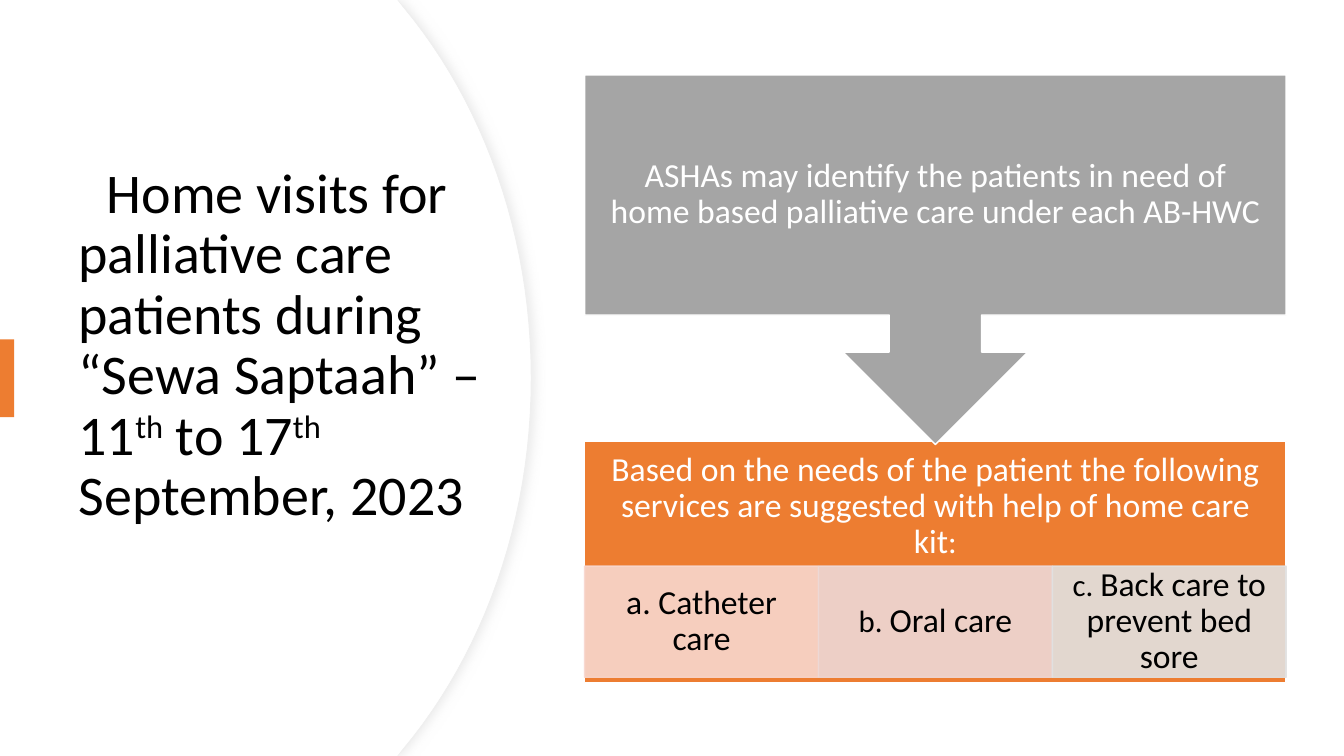
"""Build a slide on home visits for palliative care patients."""
from dataclasses import dataclass

from lxml import etree
from pptx import Presentation
from pptx import util as u
from pptx.dml.color import RGBColor
from pptx.enum import shapes, text
from pptx.oxml import parse_xml
from pptx.oxml.ns import nsdecls, qn

WIDTH, HEIGHT = u.Inches(13.33), u.Inches(7.5)
COLOURS = {
    "white": "FFFFFF", "black": "000000", "orange": "ED7D31", "grey": "A5A5A5",
    "edge": "EFEFEF", "shade": "D9D9D9",
    "peach": "F8D7CE", "rose": "EDD9D7", "silver": "E1E1E1",
}
CURVE_STEPS = 24


@dataclass(frozen=True)
class Area:
    """A rectangle in percent of the slide's size."""
    left: float
    top: float
    width: float
    height: float

    def emu(self) -> tuple:
        return (share(self.left, WIDTH), share(self.top, HEIGHT),
                share(self.width, WIDTH), share(self.height, HEIGHT))


@dataclass(frozen=True)
class Run:
    """A piece of text with its size and baseline."""
    words: str
    size: float = 24
    raised: bool = False


@dataclass(frozen=True)
class Service:
    """One service of the home care kit."""
    runs: tuple
    colour: str
    side: float


def share(percent: float, whole: int) -> u.Emu:
    """Turn a percentage of a length into EMU."""
    return u.Emu(round(percent * whole / 100))


def rgb(name: str) -> RGBColor:
    """Look up a named colour."""
    return RGBColor.from_string(COLOURS[name])


def write(shape, runs, *, colour="white", align=text.PP_ALIGN.CENTER,
          insets=(0.19, 0.19, 0.19, 0.19), indent=0.0) -> None:
    """Fill a shape with one formatted paragraph; insets run left, top, right, bottom."""
    frame = shape.text_frame
    frame.word_wrap = True
    frame.auto_size = text.MSO_AUTO_SIZE.NONE
    frame.vertical_anchor = text.MSO_ANCHOR.MIDDLE
    (frame.margin_left, frame.margin_top,
     frame.margin_right, frame.margin_bottom) = map(u.Inches, insets)
    paragraph = frame.paragraphs[0]
    paragraph.alignment = align
    paragraph.line_spacing = 0.9
    if indent:
        paragraph._p.get_or_add_pPr().set("indent", str(u.Inches(indent)))
    for part in runs:
        run = paragraph.add_run()
        run.text = part.words
        run.font.name = "Calibri"
        run.font.size = u.Pt(part.size)
        run.font.color.rgb = rgb(colour)
        if part.raised:
            run._r.get_or_add_rPr().set("baseline", "30000")


def paint(shape, fill, line=None, width=1.0, opacity=100) -> None:
    """Set a shape's fill, outline and opacity, and drop its shadow."""
    shape.shadow.inherit = False
    shape.fill.solid()
    shape.fill.fore_color.rgb = rgb(fill)
    if line:
        shape.line.color.rgb = rgb(line)
        shape.line.width = u.Pt(width)
    else:
        shape.line.fill.background()
    if opacity < 100:
        for colour in shape.element.spPr.iter(qn("a:srgbClr")):
            etree.SubElement(colour, qn("a:alpha")).set("val", str(opacity * 1000))


def add_block(slide, kind, area: Area, fill, line=None, opacity=100):
    """Add a painted preset shape."""
    block = slide.shapes.add_shape(kind, *area.emu())
    paint(block, fill, line, opacity=opacity)
    return block


def add_panel(slide, bulge: float):
    """Add the left panel whose curved edge reaches the given inch mark."""
    upper = [(bulge - 1.26, 0.08), (bulge - 0.48, 1.02), (bulge, 2.32), (bulge, 3.75)]
    arc = []
    for step in range(CURVE_STEPS + 1):
        t = step / CURVE_STEPS
        weights = ((1 - t) ** 3, 3 * t * (1 - t) ** 2, 3 * t * t * (1 - t), t ** 3)
        arc.append(tuple(sum(w * point[axis] for w, point in zip(weights, upper))
                         for axis in (0, 1)))
    half = [(3.94, 0), *arc]
    mirrored = [(x, 7.5 - y) for x, y in reversed(half[:-1])]
    outline = [(u.Inches(x), u.Inches(y)) for x, y in [*half, *mirrored, (0, 7.5)]]
    builder = slide.shapes.build_freeform(0, 0)
    builder.add_line_segments(outline, close=True)
    return builder.convert_to_shape()


def add_panel_shadow(panel) -> None:
    """Give the panel a soft shadow to its right."""
    effects = panel.element.spPr.find(qn("a:effectLst"))
    effects.append(parse_xml(
        f'<a:outerShdw {nsdecls("a")} blurRad="{u.Pt(7)}" dist="{u.Pt(3)}" dir="0">'
        f'<a:srgbClr val="{COLOURS["shade"]}"><a:alpha val="50000"/></a:srgbClr>'
        '</a:outerShdw>'))


def main() -> None:
    """Compose and save the slide."""
    deck = Presentation()
    deck.slide_width, deck.slide_height = WIDTH, HEIGHT
    slide = deck.slides.add_slide(deck.slide_layouts[5])
    rectangle = shapes.MSO_SHAPE.RECTANGLE

    outer_panel = add_panel(slide, 5.27)
    paint(outer_panel, "white", "edge", 0.75)
    add_panel_shadow(outer_panel)
    paint(add_panel(slide, 5.26), "white")

    title = slide.shapes.title
    slide.shapes.element.append(title.element)
    title.left, title.top, title.width, title.height = Area(5.1, 16.9, 31.8, 66).emu()
    write(title, [
        Run("Home visits for palliative care patients during “Sewa Saptaah” – 11", 40),
        Run("th", 40, True), Run(" to 17", 40), Run("th", 40, True),
        Run(" September, 2023", 40),
    ], colour="black", align=text.PP_ALIGN.LEFT, insets=(0.1, 0.05, 0.1, 0.66), indent=0.28)

    add_block(slide, rectangle, Area(0, 44.9, 1.05, 10.3), "orange")

    left, width = 43.5, 52.2
    needs = add_block(slide, rectangle, Area(left, 58.4, width, 31.9), "orange", "white")
    write(needs, [
        Run("Based on the needs of the patient the following services "
            "are suggested with help of home care kit"),
        Run(":", 23),
    ], insets=(0.19, 0.19, 0.19, 1.29))

    services = [
        Service((Run("a. Catheter care"),), "peach", 0.19),
        Service((Run("b. ", 22), Run("Oral care")), "rose", 0.17),
        Service((Run("c. ", 22), Run("Back care to prevent bed sore")), "silver", 0.17),
    ]
    column = width / len(services)
    for index, service in enumerate(services):
        area = Area(left + index * column, 74.9, column, 14.7)
        cell = add_block(slide, rectangle, area, service.colour, service.colour, 90)
        write(cell, service.runs, colour="black",
              insets=(service.side, 0.03, service.side, 0.03))

    identify = add_block(slide, shapes.MSO_SHAPE.DOWN_ARROW_CALLOUT,
                         Area(left, 9.9, width, 48.9), "grey", "white")
    write(identify, [Run("ASHAs may identify the patients in need of home based "
                         "palliative care under each AB-HWC")])

    deck.save("out.pptx")


if __name__ == "__main__":
    main()
